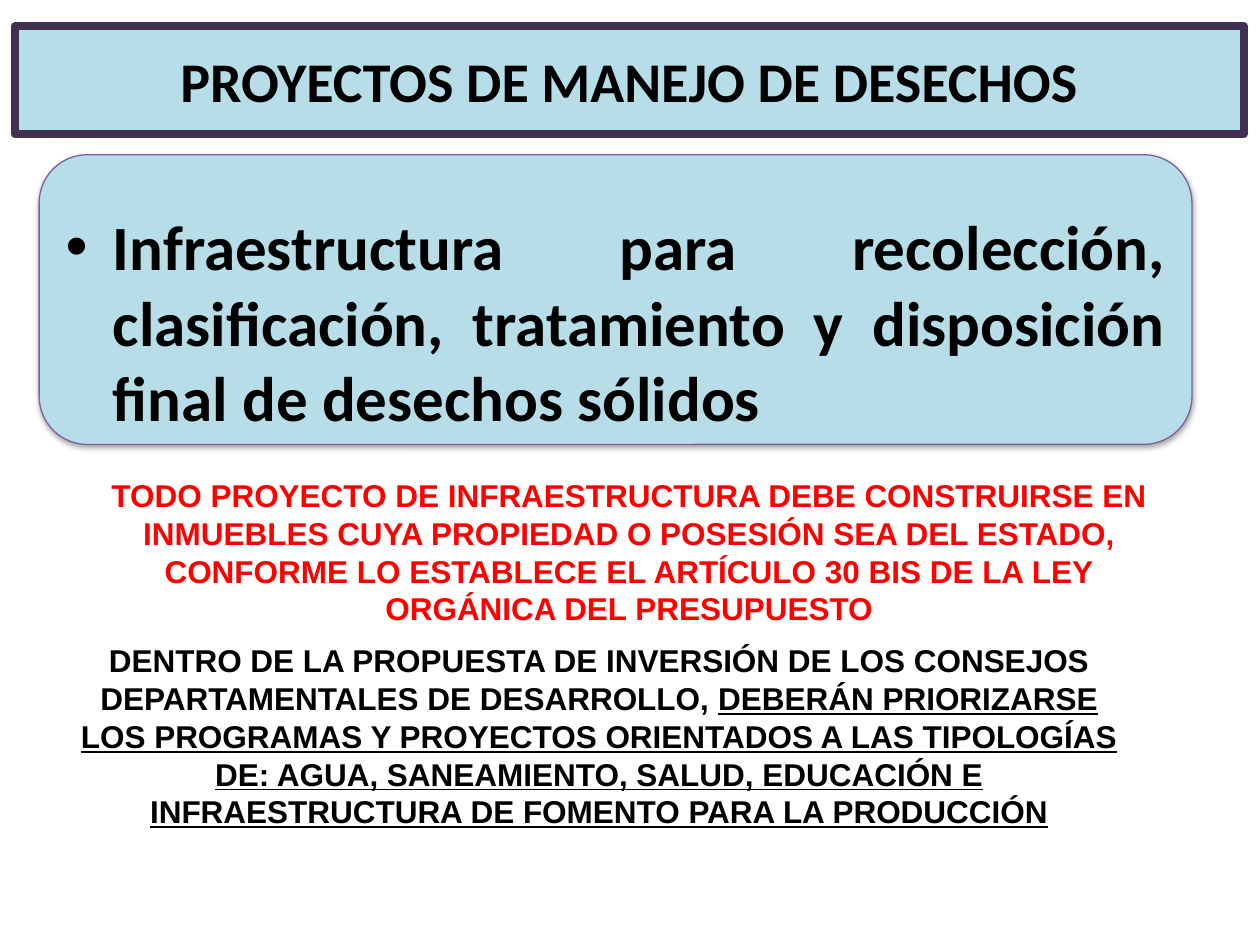
from lxml.etree import SubElement
from pptx import Presentation
from pptx.dml.color import RGBColor
from pptx.enum.shapes import MSO_SHAPE
from pptx.enum.text import MSO_ANCHOR, MSO_AUTO_SIZE, PP_ALIGN
from pptx.oxml.ns import qn
from pptx.util import Cm, Pt

PANEL, DARK, PURPLE, RED, BLACK = "B7DEE8", "403152", "7D60A0", "FF0000", "000000"
HEADING = {"name": "Calibri", "size": Pt(32), "bold": True}
LIST = {**HEADING, "size": Pt(36)}
NOTE = {"name": "Arial", "size": Pt(18), "bold": True}


def rgb(value):
    return RGBColor.from_string(value)


def place(sp, box):
    for attr, value in zip(("left", "top", "width", "height"), box):
        setattr(sp, attr, Cm(value))


def paint(sp, fill, line, width):
    sp.fill.solid()
    sp.fill.fore_color.rgb = rgb(fill)
    sp.line.color.rgb = rgb(line)
    sp.line.width = Pt(width)


def add_run(p, text, fmt, color=BLACK):
    r = p.add_run()
    r.text = text
    for attr, value in fmt.items():
        setattr(r.font, attr, value)
    r.font.color.rgb = rgb(color)


def set_frame(tf, anchor, wrap=True):
    frame = {"word_wrap": wrap, "vertical_anchor": anchor,
             "auto_size": MSO_AUTO_SIZE.NONE}
    for attr, value in frame.items():
        setattr(tf, attr, value)


def add_soft_shadow(sp):
    sp.shadow.inherit = False
    effects = sp._element.spPr.find(qn("a:effectLst"))
    shadow = SubElement(effects, qn("a:outerShdw"), blurRad=str(Pt(3.1)),
                        dist=str(Pt(1.8)), dir="5400000", rotWithShape="0")
    color = SubElement(shadow, qn("a:srgbClr"), val=BLACK)
    SubElement(color, qn("a:alpha"), val="35000")


def build_title(s, box, text):
    sp = s.shapes.title
    place(sp, box)
    paint(sp, PANEL, DARK, 4.5)
    set_frame(sp.text_frame, MSO_ANCHOR.MIDDLE)
    p = sp.text_frame.paragraphs[0]
    p.alignment = PP_ALIGN.CENTER
    add_run(p, text, HEADING)


def build_list_card(s, box, items):
    left, top, width, height = box
    # Rounded card, kept behind the list
    card = s.shapes.add_shape(MSO_SHAPE.ROUNDED_RECTANGLE, 0, 0, 0, 0)
    place(card, box)
    paint(card, PANEL, PURPLE, 0.75)
    add_soft_shadow(card)
    body = s.placeholders[1]
    body._element.addprevious(card._element)
    # Bulleted list, set low in the card
    inset, drop = 0.28, 0.86
    place(body, (left + inset, top + drop, width - 2 * inset, height - drop))
    tf = body.text_frame
    set_frame(tf, MSO_ANCHOR.MIDDLE)
    for i, item in enumerate(items):
        p = tf.add_paragraph() if i else tf.paragraphs[0]
        p.alignment, p.space_before = PP_ALIGN.JUSTIFY, Pt(0)
        add_run(p, item, LIST)


def build_note(s, box, paragraphs, color, wrap=True):
    sp = s.shapes.add_textbox(0, 0, 0, 0)
    place(sp, box)
    tf = sp.text_frame
    set_frame(tf, MSO_ANCHOR.TOP, wrap)
    for i, runs in enumerate(paragraphs):
        p = tf.add_paragraph() if i else tf.paragraphs[0]
        p.alignment = PP_ALIGN.CENTER
        for text, underline in runs:
            add_run(p, text, {**NOTE, "underline": underline}, color)


def main():
    prs = Presentation()
    prs.slide_width, prs.slide_height = Cm(25.4), Cm(19.05)
    s = prs.slides.add_slide(prs.slide_layouts[1])

    build_title(s, (0.3, 0.53, 24.77, 2.18), "PROYECTOS DE MANEJO DE DESECHOS")
    build_list_card(s, (0.79, 3.12, 23.24, 5.84), [
        "Infraestructura para recolección, clasificación, tratamiento y "
        "disposición final de desechos sólidos"])

    # Legal requirement, with fixed line ends
    requirement = ["TODO PROYECTO DE INFRAESTRUCTURA DEBE CONSTRUIRSE EN",
                   "INMUEBLES CUYA PROPIEDAD O POSESIÓN SEA DEL ESTADO,",
                   "CONFORME LO ESTABLECE EL ARTÍCULO 30 BIS DE LA LEY",
                   "ORGÁNICA DEL PRESUPUESTO"]
    build_note(s, (1.95, 9.47, 21.47, 3.33),
               [[(line, False)] for line in requirement], RED, wrap=False)

    # Investment priorities
    build_note(s, (1.27, 12.8, 21.62, 4.12), [[
        ("DENTRO DE LA PROPUESTA DE INVERSIÓN DE LOS CONSEJOS "
         "DEPARTAMENTALES DE DESARROLLO, ", False),
        ("DEBERÁN PRIORIZARSE LOS PROGRAMAS Y PROYECTOS ORIENTADOS A LAS "
         "TIPOLOGÍAS DE: AGUA, SANEAMIENTO, SALUD, EDUCACIÓN E "
         "INFRAESTRUCTURA DE FOMENTO PARA LA PRODUCCIÓN", True)]], BLACK)

    prs.save("out.pptx")


if __name__ == "__main__":
    main()
